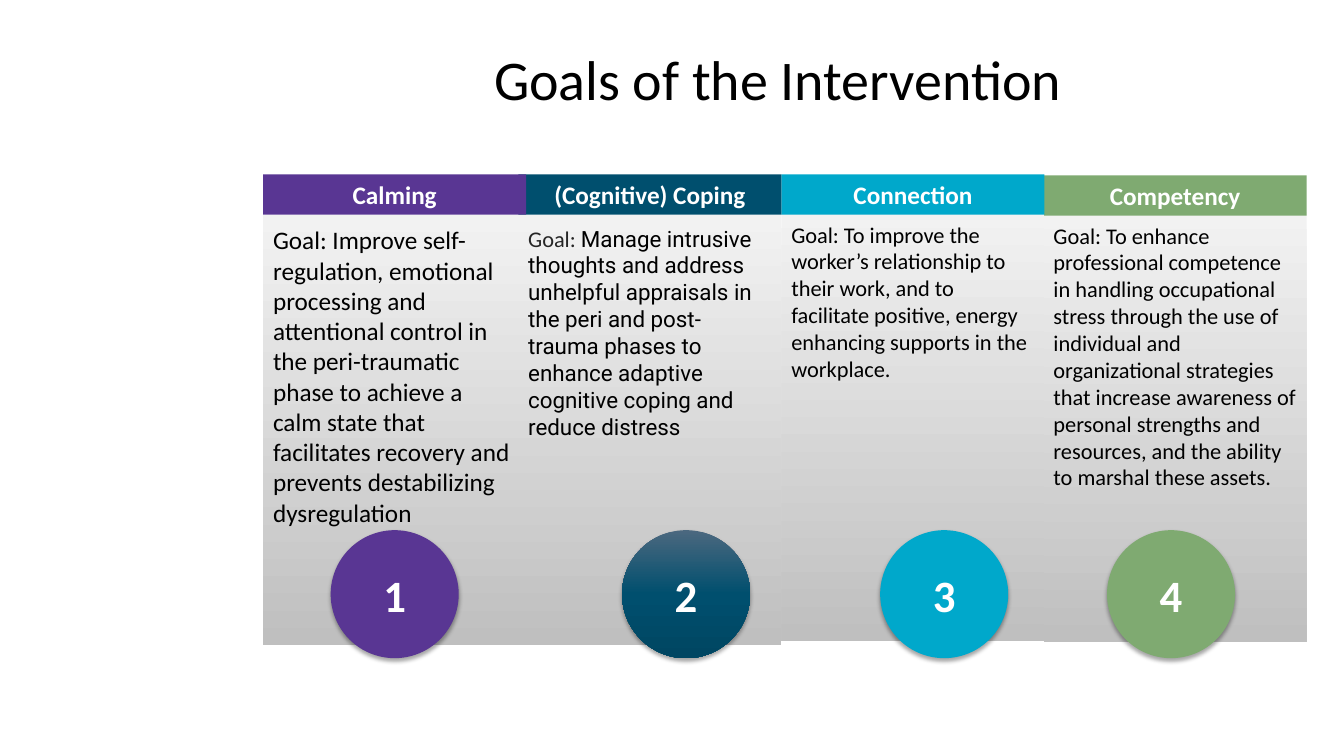
"""Build the slide on the four goals of the intervention."""
from pptx import Presentation
from pptx.dml.color import RGBColor
from pptx.enum.shapes import MSO_SHAPE as Shape
from pptx.enum.text import MSO_ANCHOR as Anchor, MSO_AUTO_SIZE as Fit, PP_ALIGN as Align
from pptx.oxml import parse_xml
from pptx.oxml.ns import nsdecls, qn
from pptx.util import Inches, Pt

WHITE, BLACK = "FFFFFF", "000000"
GRAY = ["F2F2F2", "BFBFBF"]
GOALS = [
    ("Calming", 2.61, 1.73, 2.13, 3.28, ["593693"], 18, "Calibri", BLACK,
     "Improve self-regulation, emotional processing and attentional control in the "
     "peri-traumatic phase to achieve a calm state that facilitates recovery and "
     "prevents destabilizing dysregulation"),
    ("(Cognitive) Coping", 5.14, 1.73, 2.13, 6.17, ["4B687F", "004F6E", "004662"],
     16, "Roboto", "262626",
     "Manage intrusive thoughts and address unhelpful appraisals in the peri and "
     "post-trauma phases to enhance adaptive cognitive coping and reduce distress"),
    ("Connection", 7.75, 1.73, 2.09, 8.73, ["00A8CB"], 16, "Calibri", BLACK,
     "To improve the worker’s relationship to their work, and to facilitate positive, "
     "energy enhancing supports in the workplace."),
    ("Competency", 10.35, 1.74, 2.10, 10.98, ["7FAA71"], 16, "Calibri", BLACK,
     "To enhance professional competence in handling occupational stress through the "
     "use of individual and organizational strategies that increase awareness of "
     "personal strengths and resources, and the ability to marshal these assets."),
]


def style(font, size, color, name="Calibri", bold=False):
    font.size, font.name, font.bold = Pt(size), name, bold
    font.color.rgb = RGBColor.from_string(color)


def block(kind, left, top, width, height, hues):
    item = slide.shapes.add_shape(
        kind, Inches(left), Inches(top), Inches(width), Inches(height))
    item.shadow.inherit = False
    item.line.fill.background()
    if len(hues) == 1:
        item.fill.solid()
        item.fill.fore_color.rgb = RGBColor.from_string(hues[0])
        return item
    item.fill.background()
    props = item.element.spPr
    stops = "".join(
        f'<a:gs pos="{100000 * i // (len(hues) - 1)}"><a:srgbClr val="{hue}"/></a:gs>'
        for i, hue in enumerate(hues))
    props.replace(props.find(qn("a:noFill")), parse_xml(
        f'<a:gradFill {nsdecls("a")} rotWithShape="1"><a:gsLst>{stops}</a:gsLst>'
        '<a:lin ang="5400000" scaled="0"/></a:gradFill>'))
    return item


deck = Presentation()
deck.slide_width, deck.slide_height = Inches(13.33), Inches(7.5)
slide = deck.slides.add_slide(deck.slide_layouts[5])

title = slide.shapes.title
title.left, title.top = Inches(4.8), Inches(0.39)
title.width, title.height = Inches(5.89), Inches(0.77)
frame = title.text_frame
frame.text = "Goals of the Intervention"
frame.word_wrap, frame.auto_size = False, Fit.SHAPE_TO_FIT_TEXT
frame.vertical_anchor = Anchor.TOP
frame.paragraphs[0].alignment = Align.LEFT
style(frame.paragraphs[0].font, 40, BLACK)

for name, left, top, base, _, hues, size, face, tint, goal in reversed(GOALS):
    body = block(Shape.RECTANGLE, left, base, 2.61, 4.27, GRAY)
    frame = body.text_frame
    frame.vertical_anchor = Anchor.TOP
    frame.margin_left = frame.margin_right = Inches(0.1)
    frame.margin_top = frame.margin_bottom = Inches(0.1)
    para = frame.paragraphs[0]
    para.alignment = Align.LEFT
    for text, font, color in (("Goal: ", "Calibri", tint), (goal, face, BLACK)):
        run = para.add_run()
        run.text = text
        style(run.font, size, color, font)

    head = block(Shape.RECTANGLE, left, top, 2.61, 0.4, [hues[len(hues) // 2]])
    head.text_frame.text = name
    para = head.text_frame.paragraphs[0]
    para.alignment = Align.CENTER
    style(para.font, 18, WHITE, bold=True)

for count, (_, _, _, _, left, hues, *_) in enumerate(GOALS, 1):
    disc = block(Shape.OVAL, left, 5.26, 1.27, 1.27, hues)
    disc.element.spPr.find(qn("a:effectLst")).append(parse_xml(
        f'<a:outerShdw {nsdecls("a")} blurRad="{Pt(3.1)}" dist="{Pt(1.8)}" '
        'dir="5400000" rotWithShape="0"><a:srgbClr val="000000">'
        '<a:alpha val="35000"/></a:srgbClr></a:outerShdw>'))
    disc.text_frame.text = str(count)
    para = disc.text_frame.paragraphs[0]
    para.alignment = Align.CENTER
    style(para.font, 32, WHITE, bold=True)

deck.save("out.pptx")
